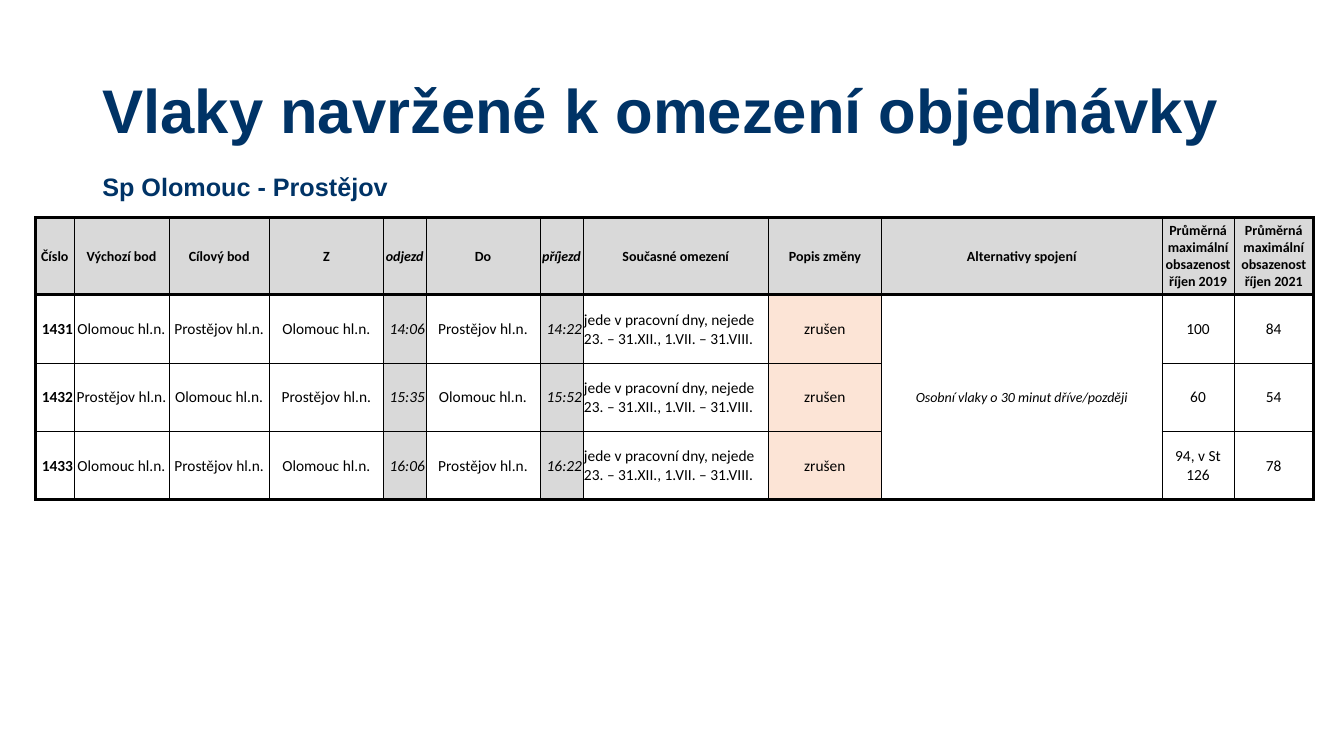
from lxml import etree
from pptx import Presentation
from pptx.dml.color import RGBColor
from pptx.enum import text
from pptx.oxml import ns
from pptx.util import Pt

COLORS = {"navy": "003366", "black": "000000", "grey": "D9D9D9", "peach": "FCE4D6"}
TITLE = "Vlaky navržené k omezení objednávky"
SUBTITLE = "Sp Olomouc - Prostějov"
LIMITS = "jede v pracovní dny, nejede 23. – 31.XII., 1.VII. – 31.VIII."
ALTERNATIVE = "Osobní vlaky o 30 minut dříve/později"
OLOMOUC, PROSTEJOV = "Olomouc hl.n.", "Prostějov hl.n."

# heading, width in points, alignment of the body cells, body fill
COLUMNS = [
    ("Číslo", 27.5, "right", None),
    ("Výchozí bod", 67.8, "center", None),
    ("Cílový bod", 71.8, "center", None),
    ("Z", 81.4, "center", None),
    ("odjezd", 30.5, "right", "grey"),
    ("Do", 81.4, "center", None),
    ("příjezd", 30.8, "right", "grey"),
    ("Současné omezení", 132.3, "left", None),
    ("Popis změny", 80.9, "center", "peach"),
    ("Alternativy spojení", 200.3, "center", None),
    ("Průměrná maximální obsazenost říjen 2019", 51.7, "center", None),
    ("Průměrná maximální obsazenost říjen 2021", 56.4, "center", None),
]
# number, from, departure, to, arrival, occupancy 2019, occupancy 2021
TRAINS = [
    ("1431", OLOMOUC, "14:06", PROSTEJOV, "14:22", "100", "84"),
    ("1432", PROSTEJOV, "15:35", OLOMOUC, "15:52", "60", "54"),
    ("1433", OLOMOUC, "16:06", PROSTEJOV, "16:22", "94, v St 126", "78"),
]
NUMBER_COLUMN, ALTERNATIVE_COLUMN, ITALIC_COLUMNS = 0, 9, (4, 6, 9)
HEADER_HEIGHT, ROW_HEIGHT = 55, 48.7
THICK, THIN = 2.25, 0.25
ALIGN = {"left": text.PP_ALIGN.LEFT, "center": text.PP_ALIGN.CENTER,
         "right": text.PP_ALIGN.RIGHT}


def add_run(para, words, size, font, color, bold=False, italic=False):
    span = para.add_run()
    span.text = words
    span.font.size, span.font.name = Pt(size), font
    span.font.bold, span.font.italic = bold, italic
    span.font.color.rgb = RGBColor.from_string(COLORS[color])


def set_borders(cell, widths):
    properties = cell._tc.get_or_add_tcPr()
    for place, (side, width) in enumerate(zip("LRTB", widths)):
        line = etree.Element(ns.qn(f"a:ln{side}"), w=str(Pt(width)))
        fill = etree.SubElement(line, ns.qn("a:solidFill"))
        etree.SubElement(fill, ns.qn("a:srgbClr"), val=COLORS["black"])
        properties.insert(place, line)


def fill_cell(cell, words, size, align, fill, bold, italic, inset):
    cell.vertical_anchor = text.MSO_ANCHOR.MIDDLE
    cell.margin_left = cell.margin_right = cell.margin_top = Pt(inset)
    cell.margin_bottom = 0
    if fill:
        cell.fill.solid()
        cell.fill.fore_color.rgb = RGBColor.from_string(COLORS[fill])
    else:
        cell.fill.background()
    para = cell.text_frame.paragraphs[0]
    para.alignment = ALIGN[align]
    if words:
        add_run(para, words, size, "Calibri", "black", bold, italic)


deck = Presentation()
deck.slide_width, deck.slide_height = Pt(960), Pt(540)
page = deck.slides.add_slide(deck.slide_layouts[5])

# Title
title = page.shapes.title
title.left, title.top, title.width, title.height = Pt(66), Pt(28.75), Pt(828), Pt(104.4)
title.text_frame.auto_size = text.MSO_AUTO_SIZE.NONE
title.text_frame.vertical_anchor = text.MSO_ANCHOR.MIDDLE
para = title.text_frame.paragraphs[0]
para.alignment, para.line_spacing = ALIGN["left"], 0.9
add_run(para, TITLE, 44, "Arial", "navy", bold=True)

# Subtitle
box = page.shapes.add_textbox(Pt(66), Pt(119), Pt(480), Pt(29))
box.text_frame.word_wrap = True
add_run(box.text_frame.paragraphs[0], SUBTITLE, 18, "Arial", "navy", bold=True)

# Table grid
row_count, column_count = len(TRAINS) + 1, len(COLUMNS)
last_row, last_column = row_count - 1, column_count - 1
table = page.shapes.add_table(
    row_count, column_count, Pt(25.4), Pt(155.6), Pt(sum(c[1] for c in COLUMNS)),
    Pt(HEADER_HEIGHT + ROW_HEIGHT * len(TRAINS))).table
table.first_row = table.horz_banding = False
for column, (_, width, _, _) in zip(table.columns, COLUMNS):
    column.width = Pt(width)
for index, row in enumerate(table.rows):
    row.height = Pt(ROW_HEIGHT if index else HEADER_HEIGHT)
table.cell(1, ALTERNATIVE_COLUMN).merge(table.cell(last_row, ALTERNATIVE_COLUMN))

# Header cells
for c, (heading, _, _, _) in enumerate(COLUMNS):
    fill_cell(table.cell(0, c), heading, 10, "center", "grey", True,
              c in ITALIC_COLUMNS[:2], 0)

# Train cells
for r, (number, start, leaves, end, arrives, load_2019, load_2021) in enumerate(TRAINS, 1):
    values = [number, start, end, start, leaves, end, arrives, LIMITS, "zrušen",
              ALTERNATIVE if r == 1 else "", load_2019, load_2021]
    for c, (words, (_, _, align, fill)) in enumerate(zip(values, COLUMNS)):
        fill_cell(table.cell(r, c), words, 10 if c == ALTERNATIVE_COLUMN else 11,
                  align, fill, c == NUMBER_COLUMN, c in ITALIC_COLUMNS, 0.7)

# Borders: thick around the table and under the header
for r in range(row_count):
    for c in range(column_count):
        merged = r > 0 and c == ALTERNATIVE_COLUMN
        set_borders(table.cell(r, c), (
            THICK if c == 0 else THIN,
            THICK if c == last_column else THIN,
            THICK if r <= 1 else THIN,
            THICK if r in (0, last_row) or merged else THIN))

deck.save("out.pptx")
